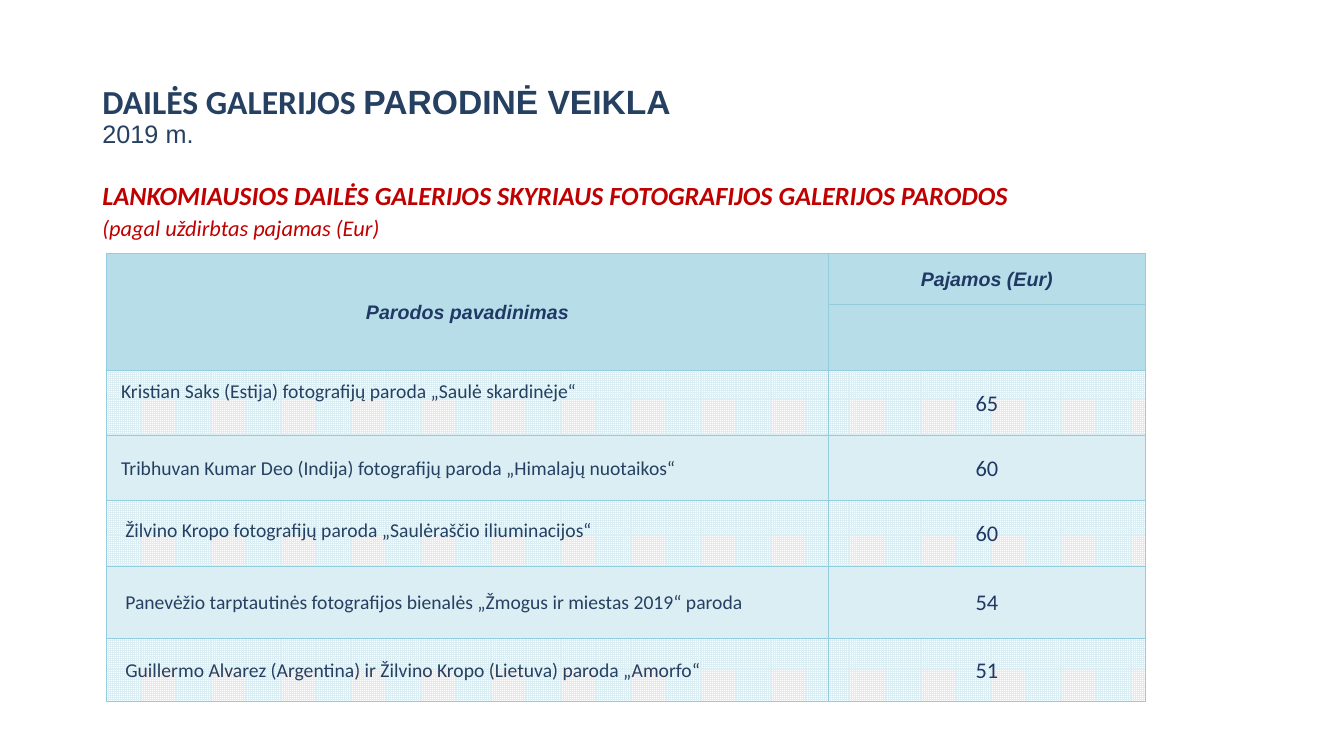
from lxml import etree
from pptx import Presentation
from pptx.dml.color import RGBColor
from pptx.enum.dml import MSO_PATTERN
from pptx.enum.text import MSO_ANCHOR, MSO_AUTO_SIZE, PP_ALIGN
from pptx.oxml.ns import qn
from pptx.util import Pt

LEFT, CENTER = PP_ALIGN.LEFT, PP_ALIGN.CENTER
TOP, MIDDLE, BOTTOM = MSO_ANCHOR.TOP, MSO_ANCHOR.MIDDLE, MSO_ANCHOR.BOTTOM
SMALL_GRID = MSO_PATTERN.SMALL_GRID
NO_FIT = MSO_AUTO_SIZE.NONE

COLORS = {"title": "254061", "accent": "C00000", "value": "203864",
          "header": "B7DEE8", "band": "DBEEF4", "white": "FFFFFF",
          "border": "93CDDD"}
COLUMN_WIDTHS = [515.5, 226.5]
ROW_HEIGHTS = [36.5, 47, 46.5, 46.5, 47, 51.5, 45]
# exhibition, income, left inset, bottom inset
EXHIBITIONS = [
    ("Kristian Saks (Estija) fotografijų paroda „Saulė skardinėje“", 65, 10.3, 16.5),
    ("Tribhuvan Kumar Deo (Indija) fotografijų paroda „Himalajų nuotaikos“", 60, 10.3, 0),
    ("Žilvino Kropo fotografijų paroda „Saulėraščio iliuminacijos“", 60, 13.3, 5),
    ("Panevėžio tarptautinės fotografijos bienalės „Žmogus ir miestas 2019“ paroda",
     54, 13.3, 0),
    ("Guillermo Alvarez (Argentina) ir Žilvino Kropo (Lietuva) paroda „Amorfo“",
     51, 13.3, 0),
]


def rgb(name):
    return RGBColor.from_string(COLORS[name])


def format_run(r, size, color, font="Calibri", bold=False, italic=False):
    r.font.size, r.font.name = Pt(size), font
    r.font.bold, r.font.italic = bold, italic
    r.font.color.rgb = rgb(color)


def place(sp, box, anchor):
    sp.left, sp.top, sp.width, sp.height = (Pt(v) for v in box)
    tf = sp.text_frame
    tf.word_wrap, tf.auto_size, tf.vertical_anchor = True, NO_FIT, anchor
    return tf


def add_title(s, box):
    tf = place(s.shapes.title, box, BOTTOM)
    tf.text = "DAILĖS GALERIJOS \n2019 m."
    heading, year = tf.paragraphs
    for p in tf.paragraphs:
        p.alignment, p.line_spacing, p.space_before = LEFT, 0.9, Pt(0)
    format_run(heading.runs[0], 24, "title", bold=True)
    r = heading.add_run()
    r.text = "PARODINĖ VEIKLA"
    format_run(r, 24, "title", "Arial", bold=True)
    format_run(year.runs[0], 18, "title", "Arial")


def add_subtitle(s, box):
    tf = place(s.placeholders[1], box, TOP)
    tf.text = ("LANKOMIAUSIOS DAILĖS GALERIJOS SKYRIAUS FOTOGRAFIJOS GALERIJOS PARODOS\n"
               "(pagal uždirbtas pajamas (Eur)")
    for p, size, bold in zip(tf.paragraphs, (18.7, 16), (True, False)):
        p.line_spacing, p.space_before = 0.6, Pt(10)
        pPr = p._p.get_or_add_pPr()
        pPr.set("marL", "0")
        pPr.set("indent", "0")
        etree.SubElement(pPr, qn("a:buNone"))
        format_run(p.runs[0], size, "accent", bold=bold, italic=True)


def add_borders(cell):
    tcPr = cell._tc.get_or_add_tcPr()
    for i, side in enumerate(("lnL", "lnR", "lnT", "lnB")):
        ln = etree.Element(qn("a:" + side), w=str(Pt(1)))
        fill = etree.SubElement(ln, qn("a:solidFill"))
        etree.SubElement(fill, qn("a:srgbClr"), val=COLORS["border"])
        tcPr.insert(i, ln)


def fill_cell(cell, color, patterned=False):
    if patterned:
        cell.fill.patterned()
        cell.fill.pattern = SMALL_GRID
        cell.fill.fore_color.rgb = rgb(color)
        cell.fill.back_color.rgb = rgb("white")
    else:
        cell.fill.solid()
        cell.fill.fore_color.rgb = rgb(color)
    add_borders(cell)


def write_cell(cell, text, align, left=0.7, bottom=0, **style):
    cell.margin_left, cell.margin_bottom = Pt(left), Pt(bottom)
    cell.margin_right = cell.margin_top = Pt(0.7)
    cell.vertical_anchor = MIDDLE
    cell.text = text
    p = cell.text_frame.paragraphs[0]
    p.alignment = align
    format_run(p.runs[0], **style)


def add_income_table(s, left, top):
    frame = s.shapes.add_table(len(ROW_HEIGHTS), len(COLUMN_WIDTHS), Pt(left), Pt(top),
                               Pt(sum(COLUMN_WIDTHS)), Pt(sum(ROW_HEIGHTS)))
    table = frame.table
    for column, width in zip(table.columns, COLUMN_WIDTHS):
        column.width = Pt(width)
    for i, (row, height) in enumerate(zip(table.rows, ROW_HEIGHTS)):
        row.height = Pt(height)
        for cell in row.cells:
            fill_cell(cell, "header" if i < 2 else "band", i >= 2 and i % 2 == 0)

    table.cell(0, 0).merge(table.cell(1, 0))
    for j, text in enumerate(("Parodos pavadinimas", "Pajamos (Eur)")):
        write_cell(table.cell(0, j), text, CENTER, size=14, color="value",
                   font="Arial", bold=True, italic=True)
    for i, (name, income, left_inset, bottom_inset) in enumerate(EXHIBITIONS, 2):
        write_cell(table.cell(i, 0), name, LEFT, left_inset, bottom_inset,
                   size=14, color="title")
        write_cell(table.cell(i, 1), str(income), CENTER, size=16, color="value")


def main():
    prs = Presentation()
    prs.slide_width, prs.slide_height = Pt(960), Pt(540)
    s = prs.slides.add_slide(prs.slide_layouts[1])
    add_title(s, (66, 36, 828, 74))
    add_subtitle(s, (66, 132.5, 828, 45.5))
    add_income_table(s, 76.2, 181.2)
    prs.save("out.pptx")


if __name__ == "__main__":
    main()
